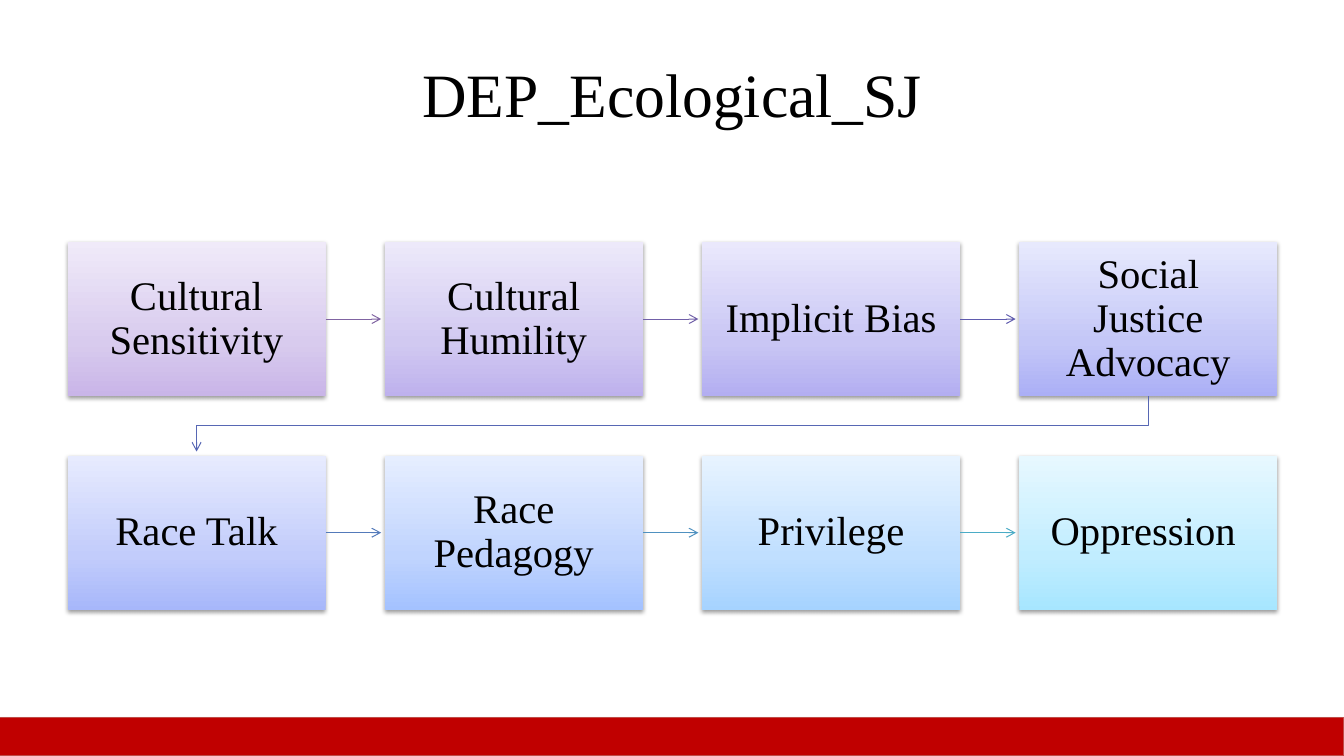
"""Build a slide with an eight-step flow of social justice topics."""
import pptx
import pptx.dml.color
import pptx.enum.shapes
import pptx.enum.text
import pptx.oxml
import pptx.oxml.ns
import pptx.util
from pptx.util import Inches

TITLE = "DEP_Ecological_SJ"
FONT = "Times New Roman"
STEPS = [
    ("Cultural Sensitivity", ("C9B5E8", "D8CBEE", "F0EAF9"), "8064A2"),
    ("Cultural Humility", ("BEB1ED", "D1C9F1", "EDE9FA"), "7160A8"),
    ("Implicit Bias", ("B3AEF1", "C9C6F4", "EAE8FC"), "5F5BAE"),
    ("Social Justice Advocacy", ("ABAFF6", "C4C7F7", "E7E9FD"), "5767B4"),
    ("Race Talk", ("A7B7FA", "C2CCFB", "E7EBFE"), "537ABA"),
    ("Race Pedagogy", ("A4C2FF", "C0D4FE", "E6EEFF"), "4F91C0"),
    ("Privilege", ("A6D3FF", "C0DFFF", "E7F3FF"), "4BACC6"),
    ("Oppression ", ("A7E6FF", "C1EDFF", "E7F8FF"), None),
]
STOPS = (0, 35, 100)
COLUMNS = 4
LEFT, TOP = 0.67, 2.4
BOX_WIDTH, BOX_HEIGHT = 2.56, 1.53
COLUMN_STEP, ROW_STEP = 9.44 / 3, 2.12
ARROW_LENGTH, ARROW_GAP = 0.55, 0.04
TURN_DROP = 0.29


def color(value):
    return pptx.dml.color.RGBColor.from_string(value)


def xml(markup):
    return pptx.oxml.parse_xml(markup.replace(">", f' {pptx.oxml.ns.nsdecls("a")}>', 1))


def write(frame, text, size):
    para = frame.paragraphs[0]
    para.alignment = pptx.enum.text.PP_ALIGN.CENTER
    frame.vertical_anchor = pptx.enum.text.MSO_ANCHOR.MIDDLE
    frame.word_wrap = True
    span = para.add_run()
    span.text = text
    span.font.name = FONT
    span.font.size = pptx.util.Pt(size)
    span.font.color.rgb = color("000000")
    return para


def add_rectangle(page, left, top, width, height, opacity, distance):
    box = page.shapes.add_shape(
        pptx.enum.shapes.MSO_SHAPE.RECTANGLE,
        Inches(left), Inches(top), Inches(width), Inches(height))
    box.shadow.inherit = False
    effects = box._element.spPr.find(pptx.oxml.ns.qn("a:effectLst"))
    effects.append(xml(
        f'<a:outerShdw blurRad="{pptx.util.Pt(3.1)}" dist="{pptx.util.Pt(distance)}"'
        ' dir="5400000" rotWithShape="0"><a:srgbClr val="000000">'
        f'<a:alpha val="{opacity * 1000}"/></a:srgbClr></a:outerShdw>'))
    return box


def fill_gradient(box, shades):
    box.fill.gradient()
    box.fill.gradient_angle = 90
    stops = box._element.spPr.find(".//" + pptx.oxml.ns.qn("a:gsLst"))
    for stop in list(stops):
        stops.remove(stop)
    for position, shade in zip(STOPS, shades):
        stops.append(xml(
            f'<a:gs pos="{position * 1000}"><a:srgbClr val="{shade}"/></a:gs>'))


def style_arrow(arrow, shade):
    arrow.line.color.rgb = color(shade)
    arrow.line.width = pptx.util.Pt(0.75)
    line = arrow.line._get_or_add_ln()
    line.append(xml('<a:tailEnd type="arrow"></a:tailEnd>'))


def add_step(page, left, top, label, shades):
    box = add_rectangle(page, left, top, BOX_WIDTH, BOX_HEIGHT, 38, 1.6)
    fill_gradient(box, shades)
    box.line.fill.background()
    frame = box.text_frame
    frame.margin_left = frame.margin_right = Inches(0.23)
    frame.margin_top = frame.margin_bottom = Inches(0.23)
    write(frame, label, 29).line_spacing = 0.9
    return box


def add_straight_arrow(page, box, left, top, shade):
    start, middle = left + BOX_WIDTH, top + BOX_HEIGHT / 2
    arrow = page.shapes.add_connector(
        pptx.enum.shapes.MSO_CONNECTOR.STRAIGHT,
        Inches(start), Inches(middle), Inches(start + ARROW_LENGTH), Inches(middle))
    arrow.begin_connect(box, 3)
    arrow._element.spPr.append(xml("<a:effectLst></a:effectLst>"))
    style_arrow(arrow, shade)


def add_turn_arrow(page, left, top, shade):
    start, end = Inches(left + BOX_WIDTH / 2), Inches(LEFT + BOX_WIDTH / 2)
    bottom = Inches(top + BOX_HEIGHT)
    turn = bottom + Inches(TURN_DROP)
    tip = Inches(top + ROW_STEP - ARROW_GAP)
    builder = page.shapes.build_freeform(start, bottom)
    builder.add_line_segments([(start, turn), (end, turn), (end, tip)], close=False)
    arrow = builder.convert_to_shape()
    arrow.shadow.inherit = False
    arrow.fill.background()
    style_arrow(arrow, shade)


def main():
    deck = pptx.Presentation()
    deck.slide_width, deck.slide_height = Inches(13.33), Inches(7.5)
    page = deck.slides.add_slide(deck.slide_layouts[5])

    title = page.shapes.title
    title.left, title.top = Inches(0.67), Inches(0.3)
    title.width, title.height = Inches(12), Inches(1.25)
    write(title.text_frame, TITLE, 44)

    bar = add_rectangle(page, 0, 7.12, 13.33, 0.38, 35, 1.8)
    bar.fill.solid()
    bar.fill.fore_color.rgb = color("C00000")
    bar.line.color.rgb = color("BF4C48")
    bar.line.width = pptx.util.Pt(0.75)

    for index, (label, shades, arrow_shade) in enumerate(STEPS):
        row, column = divmod(index, COLUMNS)
        left, top = LEFT + column * COLUMN_STEP, TOP + row * ROW_STEP
        box = add_step(page, left, top, label, shades)
        if arrow_shade and column < COLUMNS - 1:
            add_straight_arrow(page, box, left, top, arrow_shade)
        elif arrow_shade:
            add_turn_arrow(page, left, top, arrow_shade)

    deck.save("out.pptx")


if __name__ == "__main__":
    main()
